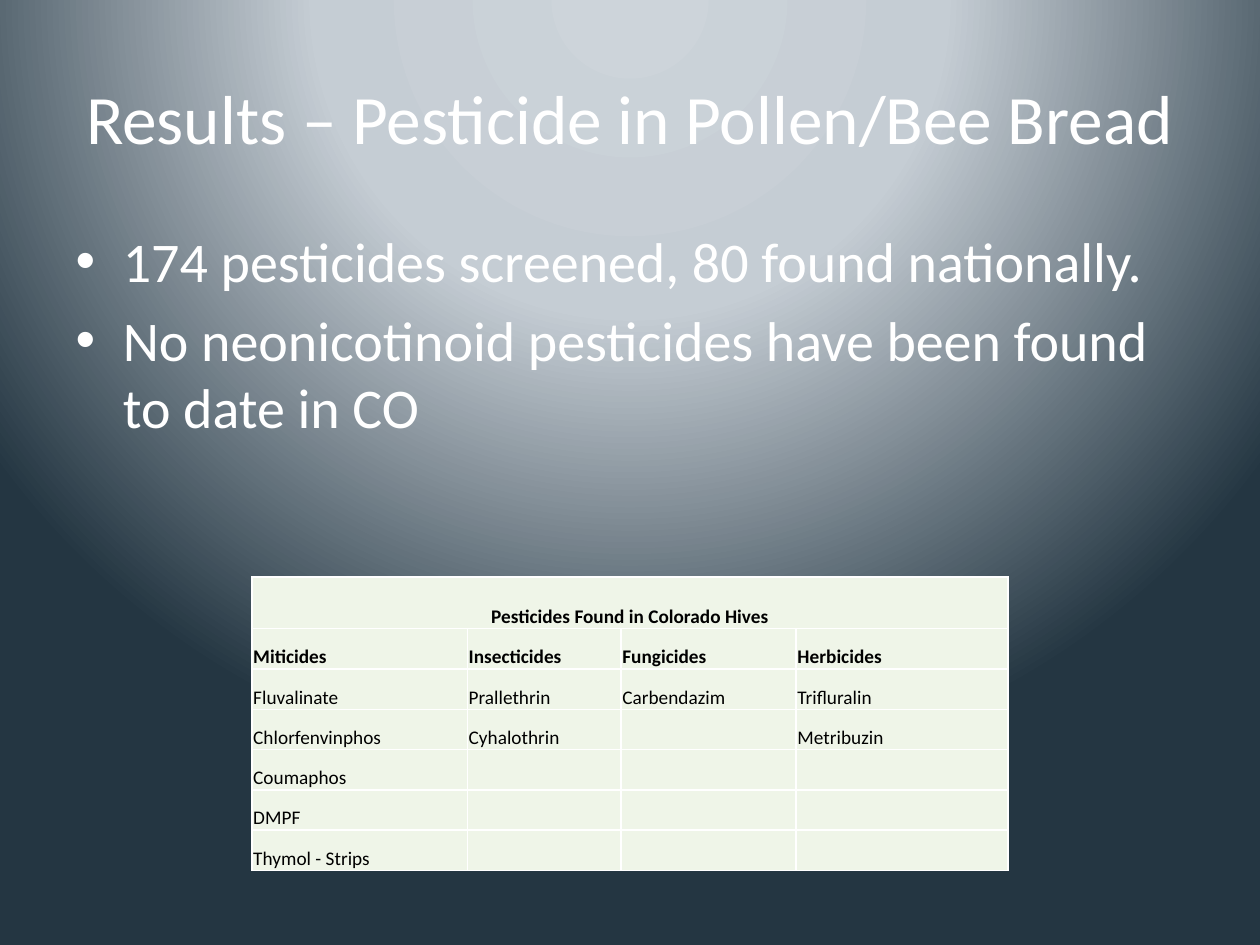
import pptx
import pptx.util
import pptx.oxml
import pptx.oxml.ns
import pptx.dml.color
import pptx.enum.text

Inches, Pt = pptx.util.Inches, pptx.util.Pt
ALIGN = pptx.enum.text.PP_ALIGN
ANCHOR = pptx.enum.text.MSO_ANCHOR
WIDTH, HEIGHT = Inches(10), Inches(7.5)
COLORS = {"text": "FFFFFF", "cell": "EFF5E8", "cell_text": "000000",
          "border": "FFFFFF"}
GRADIENT = [(0, "CDD4DA"), (40, "C5CDD4"), (100, "243642")]
FONT = "Calibri"

TITLE = "Results – Pesticide in Pollen/Bee Bread"
POINTS = ["174 pesticides screened, 80 found nationally.",
          "No neonicotinoid pesticides have been found to date in CO"]
CAPTION = "Pesticides Found in Colorado Hives"
PESTICIDES = {
    "Miticides": ["Fluvalinate", "Chlorfenvinphos", "Coumaphos", "DMPF",
                  "Thymol - Strips"],
    "Insecticides": ["Prallethrin", "Cyhalothrin"],
    "Fungicides": ["Carbendazim"],
    "Herbicides": ["Trifluralin", "Metribuzin"],
}
COLUMN_WIDTHS = [1.71, 1.22, 1.39, 1.68]
CAPTION_HEIGHT, ROW_HEIGHT = 0.41, 0.32


def set_values(target, values):
    for name, value in values.items():
        setattr(target, name, value)


def rgb(name):
    return pptx.dml.color.RGBColor.from_string(COLORS[name])


def xml(text):
    return pptx.oxml.parse_xml(text.replace(
        ">", " " + pptx.oxml.ns.nsdecls("a") + ">", 1))


def write(para, text, size, color, bold=False):
    span = para.add_run()
    span.text = text
    set_values(span.font, {"name": FONT, "size": Pt(size), "bold": bold})
    span.font.color.rgb = rgb(color)


def paint_background(page):
    page.background.fill.solid()
    holder = page.element.find(".//" + pptx.oxml.ns.qn("p:bgPr"))
    stops = "".join(
        f'<a:gs pos="{share * 1000}"><a:srgbClr val="{color}"/></a:gs>'
        for share, color in GRADIENT)
    holder.replace(holder[0], xml(
        f'<a:gradFill rotWithShape="1"><a:gsLst>{stops}</a:gsLst>'
        '<a:path path="circle"><a:fillToRect l="50000" t="-80000" '
        'r="50000" b="180000"/></a:path></a:gradFill>'))


def fill_placeholder(box, top, height, lines, size, form):
    set_values(box, {"left": int(WIDTH * 0.05), "top": Inches(top),
                     "width": int(WIDTH * 0.9), "height": Inches(height)})
    frame = box.text_frame
    frame.auto_size = pptx.enum.text.MSO_AUTO_SIZE.NONE
    for number, line in enumerate(lines):
        para = frame.add_paragraph() if number else frame.paragraphs[0]
        set_values(para, form)
        write(para, line, size, "text")


def format_cell(cell, text, bold, align):
    set_values(cell, {"margin_left": Inches(0.01), "margin_right": Inches(0.01),
                      "margin_top": Inches(0.01), "margin_bottom": 0,
                      "vertical_anchor": ANCHOR.BOTTOM})
    properties = cell._tc.get_or_add_tcPr()
    for side in "LRTB":
        properties.append(xml(
            f'<a:ln{side} w="12700"><a:solidFill><a:srgbClr '
            f'val="{COLORS["border"]}"/></a:solidFill></a:ln{side}>'))
    cell.fill.solid()
    cell.fill.fore_color.rgb = rgb("cell")
    para = cell.text_frame.paragraphs[0]
    para.alignment = align
    write(para, text, 11, "cell_text", bold)


def add_pesticide_table(page):
    columns = [[name] + found for name, found in PESTICIDES.items()]
    depth = max(map(len, columns))
    width = sum(COLUMN_WIDTHS)
    table = page.shapes.add_table(
        depth + 1, len(columns), (WIDTH - Inches(width)) // 2, Inches(4.58),
        Inches(width), Inches(CAPTION_HEIGHT + depth * ROW_HEIGHT)).table
    for column, size in zip(table.columns, COLUMN_WIDTHS):
        column.width = Inches(size)
    for number, row in enumerate(table.rows):
        row.height = Inches(ROW_HEIGHT if number else CAPTION_HEIGHT)

    # Caption across the top, then one column for each kind of pesticide
    for across, entries in enumerate(columns):
        format_cell(table.cell(0, across), "" if across else CAPTION,
                    True, ALIGN.CENTER)
        for down in range(depth):
            text = entries[down] if down < len(entries) else ""
            format_cell(table.cell(down + 1, across), text, down == 0, ALIGN.LEFT)
    table.cell(0, 0).merge(table.cell(0, len(columns) - 1))


def main():
    deck = pptx.Presentation()
    set_values(deck, {"slide_width": WIDTH, "slide_height": HEIGHT})
    page = deck.slides.add_slide(deck.slide_layouts[1])
    paint_background(page)

    # Title and list
    title, body = page.placeholders
    title.text_frame.vertical_anchor = ANCHOR.MIDDLE
    fill_placeholder(title, 0.3, 1.25, [TITLE], 39.6, {"alignment": ALIGN.CENTER})
    fill_placeholder(body, 1.75, 4.95, POINTS, 32, {"space_before": Pt(6.4)})

    add_pesticide_table(page)
    deck.save("out.pptx")


if __name__ == "__main__":
    main()
